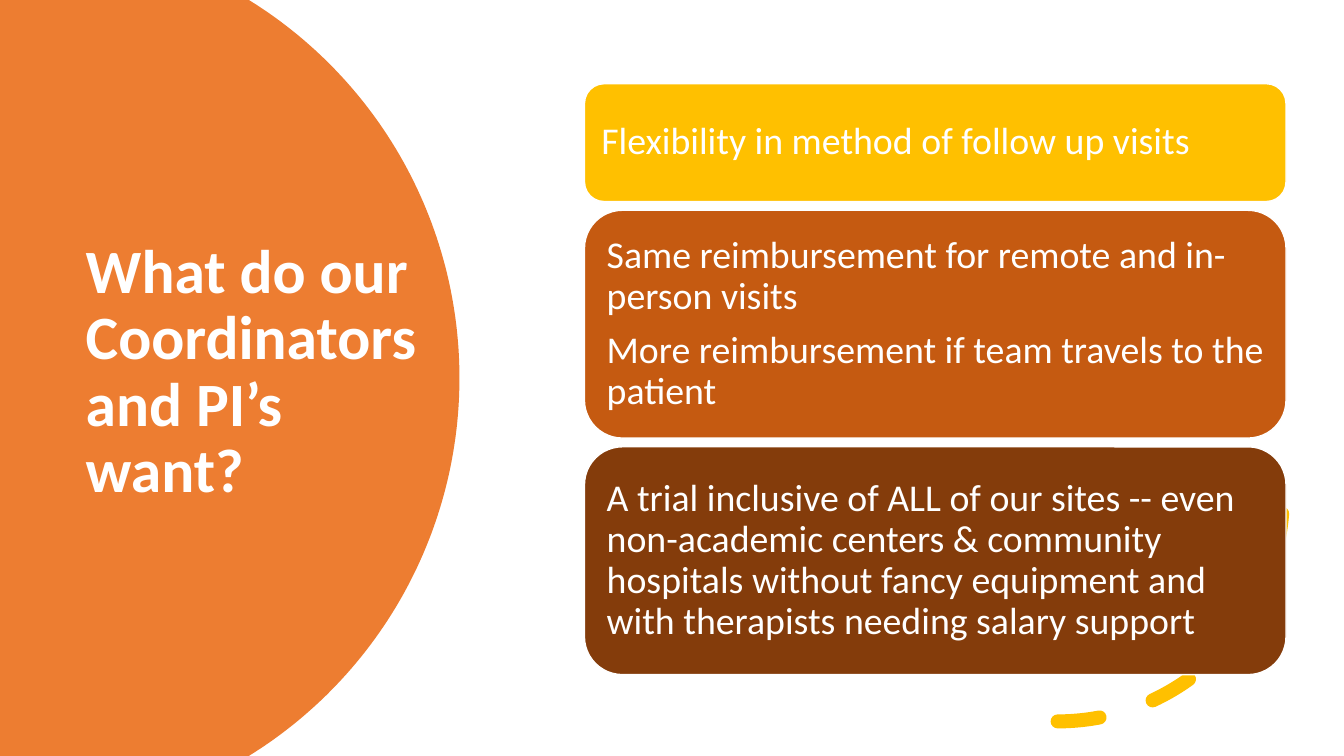
from math import asin, cos, sin

from pptx import Presentation
from pptx.dml.color import RGBColor
from pptx.enum.dml import MSO_LINE
from pptx.enum.shapes import MSO_SHAPE
from pptx.enum.text import MSO_ANCHOR, MSO_AUTO_SIZE, PP_ALIGN
from pptx.util import Cm, Pt

HUES = {
    "white": "FFFFFF",
    "orange": "ED7D31",
    "gold": "FFC000",
    "rust": "C55A11",
    "brown": "843C0B",
}


def hue(name):
    return RGBColor.from_string(HUES[name])


def write(frame, text, size=27, bold=False, inset=0.28, after=0):
    frame.text = text
    frame.word_wrap = True
    frame.auto_size = MSO_AUTO_SIZE.NONE
    frame.vertical_anchor = MSO_ANCHOR.MIDDLE
    frame.margin_left = frame.margin_right = Cm(inset)
    frame.margin_top = frame.margin_bottom = Cm(inset)
    for para in frame.paragraphs:
        para.alignment = PP_ALIGN.LEFT
        para.line_spacing = 0.9
        para.space_before = Pt(0)
        para.space_after = Pt(after)
        font = para.runs[0].font
        font.name = "Calibri"
        font.size = Pt(size)
        font.bold = bold
        font.color.rgb = hue("white")


deck = Presentation()
deck.slide_width = Cm(33.87)
deck.slide_height = Cm(19.05)
slide = deck.slides.add_slide(deck.slide_layouts[5])
shapes = slide.shapes

mid_x, mid_y, radius, steps = 0.38, 9.525, 11.2, 120
sweep = asin(mid_y / radius)
turns = [sweep * (2 * i / steps - 1) for i in range(steps + 1)]
curve = [(Cm(mid_x + radius * cos(t)), Cm(mid_y + radius * sin(t))) for t in turns]
outline = shapes.build_freeform(0, 0)
outline.add_line_segments(curve + [(0, Cm(19.05))], close=True)
disc = outline.convert_to_shape()
disc.shadow.inherit = False
disc.fill.solid()
disc.fill.fore_color.rgb = hue("orange")
disc.line.fill.background()

title = shapes.title
shapes.element.append(title.element)
title.left, title.top, title.width, title.height = Cm(1.91), Cm(3.2), Cm(9.68), Cm(12.4)
write(title.text_frame, "What do our Coordinators and PI’s want?", size=44, bold=True, inset=0.25)

arc = shapes.add_shape(MSO_SHAPE.ARC, Cm(20.98), Cm(6.83), Cm(11.35), Cm(11.35))
arc.shadow.inherit = False
arc.fill.background()
arc.line.color.rgb = hue("gold")
arc.line.width = Pt(10)
arc.line.dash_style = MSO_LINE.DASH
arc.element.spPr.ln.set("cap", "rnd")
arc.element.spPr.xfrm.set("flipV", "1")

cards = [
    ("gold", 2.97, "Flexibility in method of follow up visits"),
    ("rust", 5.74, "Same reimbursement for remote and in-person visits\n"
                   "More reimbursement if team travels to the patient"),
    ("brown", 5.74, "A trial inclusive of ALL of our sites -- even non-academic centers & "
                    "community hospitals without fancy equipment and with therapists "
                    "needing salary support"),
]
top, gap = 2.11, 0.22
for color, height, text in cards:
    card = shapes.add_shape(MSO_SHAPE.ROUNDED_RECTANGLE, Cm(14.73), Cm(top), Cm(17.68), Cm(height))
    card.shadow.inherit = False
    card.fill.solid()
    card.fill.fore_color.rgb = hue(color)
    card.line.color.rgb = hue("white")
    card.line.width = Pt(1)
    write(card.text_frame, text, after=9.5)
    top += height + gap

deck.save("out.pptx")
